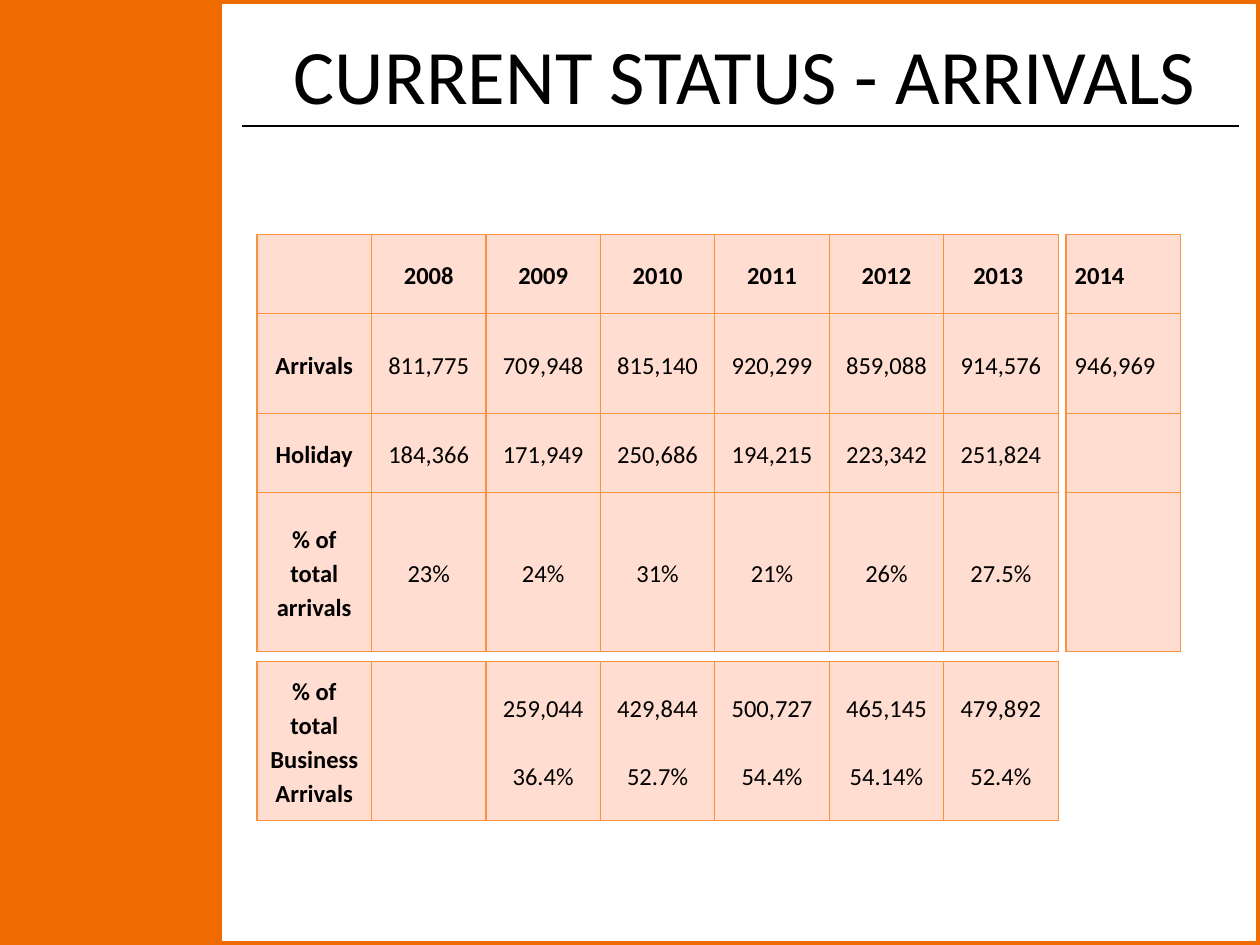
import pptx
import pptx.util
import pptx.dml.color
import pptx.enum.shapes
import pptx.enum.text
import pptx.oxml.ns
import lxml.etree

Inches = pptx.util.Inches
Pt = pptx.util.Pt
Align = pptx.enum.text.PP_ALIGN
Anchor = pptx.enum.text.MSO_ANCHOR

COLORS = {"orange": "EF6B00", "border": "F69240", "cell": "FFDDD0", "text": "000000"}
FONT = "Calibri"
COLUMN_WIDTH = 6.36 / 7
TABLE_LEFT, TABLE_TOP = 2.04, 1.86
ROW_HEIGHTS = [0.63, 0.79, 0.63, 1.26]

ARRIVALS = [
    ["", "2008", "2009", "2010", "2011", "2012", "2013 "],
    ["Arrivals", "811,775", "709,948", "815,140", "920,299", "859,088", "914,576"],
    ["Holiday", "184,366", "171,949", "250,686", "194,215", "223,342", "251,824"],
    ["% of total arrivals", "23%", "24%", "31%", "21%", "26%", "27.5%"],
]
LATEST_YEAR = [["2014"], ["946,969"], [""], [""]]
BUSINESS = [[
    "% of total Business Arrivals", "", "259,044\n36.4%", "429,844\n52.7%",
    "500,727\n54.4%", "465,145\n54.14%", "479,892\n52.4%",
]]


def rgb(name):
    return pptx.dml.color.RGBColor.from_string(COLORS[name])


class SlideBuilder:
    def __init__(self, slide):
        self.slide = slide

    def rectangle(self, left, top, width, height, line_width, fill=None):
        shape = self.slide.shapes.add_shape(
            pptx.enum.shapes.MSO_SHAPE.RECTANGLE,
            Inches(left), Inches(top), Inches(width), Inches(height))
        shape.shadow.inherit = False
        if fill:
            shape.fill.solid()
            shape.fill.fore_color.rgb = rgb(fill)
        else:
            shape.fill.background()
        shape.line.color.rgb = rgb("orange")
        shape.line.width = Pt(line_width)

    def rule(self, left, right, y):
        connector = self.slide.shapes.add_connector(
            pptx.enum.shapes.MSO_CONNECTOR.STRAIGHT,
            Inches(left), Inches(y), Inches(right), Inches(y))
        connector.line.color.rgb = rgb("text")
        connector.line.width = Pt(1)
        lxml.etree.SubElement(connector._element.spPr, pptx.oxml.ns.qn("a:effectLst"))

    def title(self, text, left, top, width, height):
        box = self.slide.shapes.add_textbox(
            Inches(left), Inches(top), Inches(width), Inches(height))
        frame = box.text_frame
        frame.word_wrap = True
        frame.vertical_anchor = Anchor.MIDDLE
        frame.text = text
        self.format_paragraph(frame.paragraphs[0], 44, Align.CENTER)

    def format_paragraph(self, paragraph, size, alignment, bold=False):
        paragraph.alignment = alignment
        for run in paragraph.runs:
            run.font.name = FONT
            run.font.size = Pt(size)
            run.font.bold = bold
            run.font.color.rgb = rgb("text")

    def table(self, rows, left, top, heights, is_header, alignment=Align.CENTER):
        """Draw a bordered grid; is_header(row, column) tells which cells are bold."""
        columns = len(rows[0])
        table = self.slide.shapes.add_table(
            len(rows), columns, Inches(left), Inches(top),
            Inches(COLUMN_WIDTH * columns), Inches(sum(heights))).table
        table.first_row = table.horz_banding = False
        for column in table.columns:
            column.width = Inches(COLUMN_WIDTH)
        for row_index, (values, height) in enumerate(zip(rows, heights)):
            table.rows[row_index].height = Inches(height)
            for column_index, text in enumerate(values):
                self.fill_cell(table.cell(row_index, column_index), text,
                               is_header(row_index, column_index), alignment)

    def fill_cell(self, cell, text, bold, alignment):
        cell.margin_left = cell.margin_right = Inches(0.07)
        cell.margin_top = cell.margin_bottom = 0
        cell.vertical_anchor = Anchor.MIDDLE
        cell.text_frame.text = text
        for index, paragraph in enumerate(cell.text_frame.paragraphs):
            self.format_paragraph(paragraph, 14, alignment, bold)
            paragraph.line_spacing = 1.15
            if index:
                paragraph.space_before = Pt(19.7)
        self.border_cell(cell)
        cell.fill.solid()
        cell.fill.fore_color.rgb = rgb("cell")

    def border_cell(self, cell):
        qn = pptx.oxml.ns.qn
        properties = cell._tc.get_or_add_tcPr()
        for side in ("lnL", "lnR", "lnT", "lnB"):
            line = lxml.etree.SubElement(properties, qn("a:" + side), w=str(Pt(0.75)))
            fill = lxml.etree.SubElement(line, qn("a:solidFill"))
            lxml.etree.SubElement(fill, qn("a:srgbClr"), val=COLORS["border"])


def main():
    presentation = pptx.Presentation()
    presentation.slide_width = Inches(10)
    presentation.slide_height = Inches(7.5)
    builder = SlideBuilder(presentation.slides.add_slide(presentation.slide_layouts[6]))

    builder.rectangle(0, 0, 10, 7.5, line_width=5)
    builder.rectangle(0, 0, 1.75, 7.5, line_width=2, fill="orange")
    builder.rule(1.92, 9.83, 1)
    builder.title("CURRENT STATUS - ARRIVALS", 2, 0.17, 7.83, 0.83)

    builder.table(ARRIVALS, TABLE_LEFT, TABLE_TOP, ROW_HEIGHTS,
                  lambda row, column: row == 0 or column == 0)
    builder.table(LATEST_YEAR, 8.46, TABLE_TOP, ROW_HEIGHTS,
                  lambda row, column: row == 0, Align.LEFT)
    builder.table(BUSINESS, TABLE_LEFT, 5.25, ROW_HEIGHTS[-1:],
                  lambda row, column: column == 0)

    presentation.save("out.pptx")


if __name__ == "__main__":
    main()
